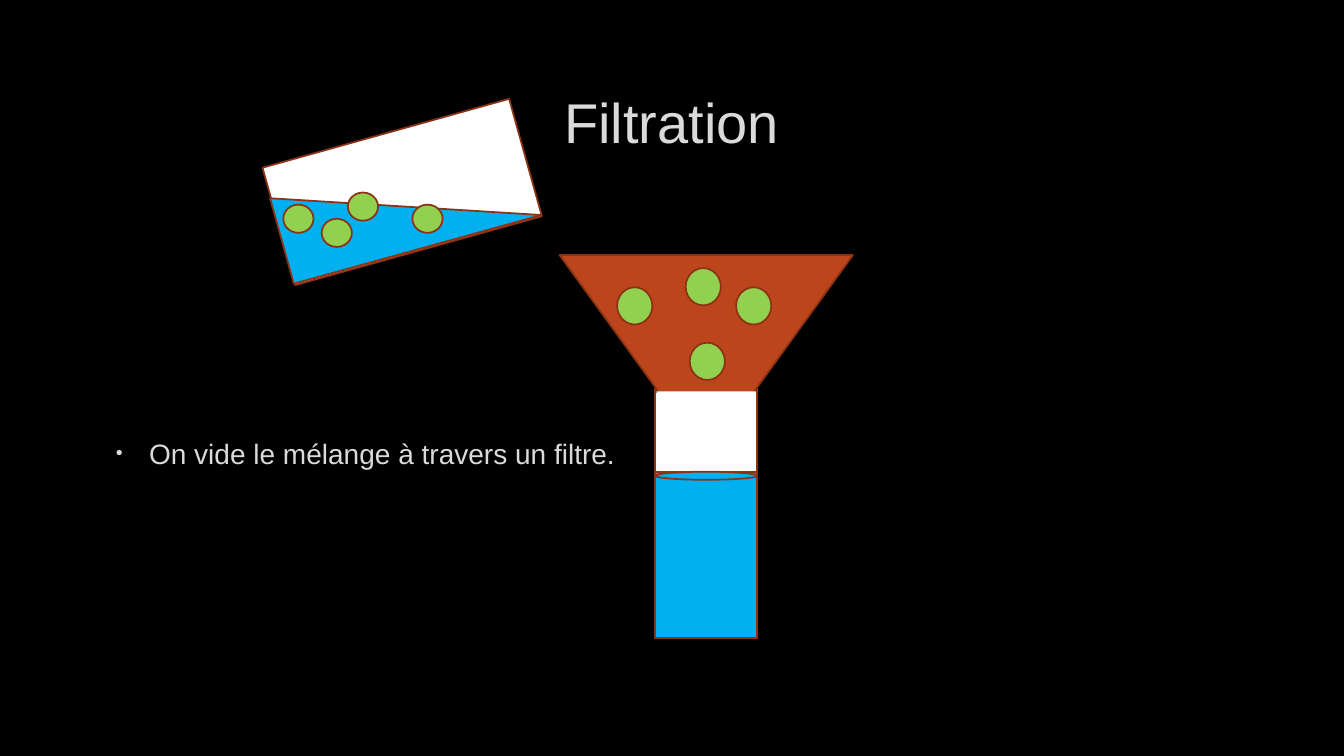
from dataclasses import dataclass

from lxml import etree
from pptx import Presentation
from pptx.dml.color import RGBColor
from pptx.enum.shapes import MSO_SHAPE
from pptx.enum.text import MSO_ANCHOR, PP_ALIGN
from pptx.oxml.ns import qn
from pptx.util import Inches, Pt


@dataclass(frozen=True)
class Theme:
    font: str = "Arial"
    title_size: int = 40
    body_size: int = 20
    outline_width: float = 1.25
    background: str = "000000"
    text: str = "DADADA"
    outline: str = "8B3314"
    glass: str = "FFFFFF"
    water: str = "00B0F0"
    filter: str = "BC451B"
    grain: str = "92D050"


def rgb(code):
    return RGBColor.from_string(code)


def add_bullet(paragraph, color):
    """Put a small round bullet with a hanging indent before the paragraph."""
    properties = paragraph._p.get_or_add_pPr()
    properties.set("marL", str(Inches(0.38)))
    properties.set("indent", str(Inches(-0.33)))
    bullet_color = etree.SubElement(properties, qn("a:buClr"))
    etree.SubElement(bullet_color, qn("a:srgbClr"), val=color)
    etree.SubElement(properties, qn("a:buSzPct"), val="70000")
    etree.SubElement(properties, qn("a:buFont"), typeface="Arial")
    etree.SubElement(properties, qn("a:buChar"), char="•")


def write_text(frame, text, *, theme, size, align=PP_ALIGN.LEFT,
               anchor=MSO_ANCHOR.TOP, bullet=False):
    frame.word_wrap = True
    frame.vertical_anchor = anchor
    paragraph = frame.paragraphs[0]
    paragraph.alignment = align
    if bullet:
        add_bullet(paragraph, theme.text)
    run = paragraph.add_run()
    run.text = text
    run.font.name = theme.font
    run.font.size = Pt(size)
    run.font.color.rgb = rgb(theme.text)


class SlideBuilder:
    def __init__(self, slide, theme):
        self.slide = slide
        self.theme = theme
        slide.background.fill.solid()
        slide.background.fill.fore_color.rgb = rgb(theme.background)

    def text(self, text, left, top, width, height, **style):
        box = self.slide.shapes.add_textbox(
            Inches(left), Inches(top), Inches(width), Inches(height))
        write_text(box.text_frame, text, theme=self.theme, **style)

    def shape(self, kind, left, top, width, height, fill, outline=None, rotation=0):
        shape = self.slide.shapes.add_shape(
            kind, Inches(left), Inches(top), Inches(width), Inches(height))
        shape.shadow.inherit = False
        shape.rotation = rotation
        shape.fill.solid()
        shape.fill.fore_color.rgb = rgb(fill)
        shape.line.color.rgb = rgb(outline or self.theme.outline)
        shape.line.width = Pt(self.theme.outline_width)

    def grains(self, corners, width, height):
        """Draw one grain of equal size at each left-top corner."""
        for left, top in corners:
            self.shape(MSO_SHAPE.OVAL, left, top, width, height, self.theme.grain)


def draw_tube(builder):
    theme = builder.theme
    left, width, bottom = 6.5, 1.01, 6.33
    levels = [(3.86, 0.05, theme.glass), (4.68, 0.08, theme.water)]
    for top, _, fill in levels:
        builder.shape(MSO_SHAPE.RECTANGLE, left, top, width, bottom - top, fill)
    for top, rim, fill in reversed(levels):
        builder.shape(MSO_SHAPE.OVAL, left, top, width, rim, fill)


def draw_funnel(builder):
    theme = builder.theme
    triangle = MSO_SHAPE.ISOSCELES_TRIANGLE
    builder.shape(triangle, 5.55, 2.53, 2.91, 2.01, theme.filter, rotation=180)
    builder.shape(triangle, 6.52, 3.89, 0.97, 0.68, theme.glass,
                  outline=theme.glass, rotation=180)
    builder.grains([(6.84, 3.4), (7.3, 2.85), (6.8, 2.66), (6.12, 2.85)], 0.35, 0.37)


def draw_tilted_beaker(builder):
    theme = builder.theme
    builder.shape(MSO_SHAPE.RECTANGLE, 2.72, 1.3, 2.54, 1.21, theme.glass,
                  rotation=344.4)
    builder.shape(MSO_SHAPE.RIGHT_TRIANGLE, 2.75, 1.61, 2.55, 0.88, theme.water,
                  rotation=344.5)
    builder.grains([(2.81, 2.03), (4.09, 2.03), (3.45, 1.91), (3.19, 2.17)], 0.3, 0.28)


def main():
    theme = Theme()
    presentation = Presentation()
    presentation.slide_width = Inches(13.33)
    presentation.slide_height = Inches(7.5)
    slide = presentation.slides.add_slide(presentation.slide_layouts[6])
    builder = SlideBuilder(slide, theme)

    builder.text("Filtration", 1, 0.67, 11.32, 1.06, size=theme.title_size,
                 align=PP_ALIGN.CENTER, anchor=MSO_ANCHOR.MIDDLE)
    builder.text("On vide le mélange à travers un filtre.", 1, 4.28, 11.32, 0.42,
                 size=theme.body_size, bullet=True)
    draw_tube(builder)
    draw_funnel(builder)
    draw_tilted_beaker(builder)
    presentation.save("out.pptx")


if __name__ == "__main__":
    main()
